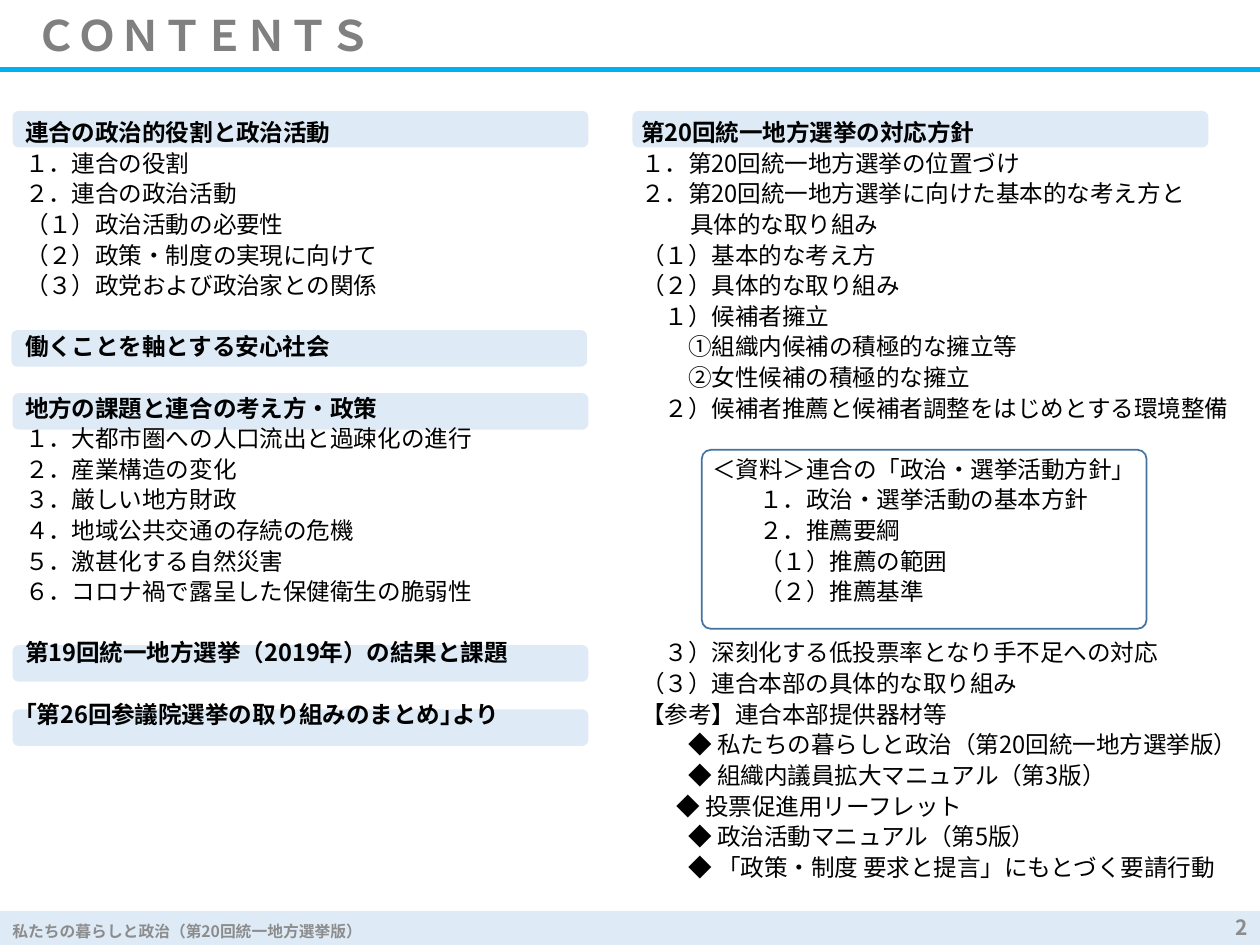
from dataclasses import dataclass
from lxml.etree import SubElement
from pptx import Presentation
from pptx.dml.color import RGBColor as RGB
from pptx.enum.shapes import MSO_CONNECTOR as Link, MSO_SHAPE as Kind
from pptx.enum.text import MSO_ANCHOR as Anchor, PP_ALIGN as Align
from pptx.oxml.ns import qn
from pptx.util import Inches, Pt


@dataclass
class Theme:
    font = "Noto Sans CJK JP"
    ink = RGB(0, 0, 0)
    title = RGB(0x80, 0x80, 0x80)
    foot = RGB(0x8C, 0x8C, 0x8C)
    pale = RGB(0xDE, 0xEB, 0xF7)
    rule = RGB(0x00, 0xB0, 0xF0)
    frame = RGB(0x43, 0x73, 0x9E)
    head_size = Pt(24)
    body_size = Pt(13.5)
    foot_size = Pt(9)
    page_size = Pt(12)
    pitch = Pt(17.5)


look = Theme()
deck = Presentation()
deck.slide_width, deck.slide_height = Inches(10), Inches(7.5)
slide = deck.slides.add_slide(deck.slide_layouts[6])
shapes = slide.shapes


def add_run(para, text, size, color, bold=False):
    run = para.add_run()
    run.text = text
    font = run.font
    font.name, font.size, font.bold = look.font, size, bold
    font.color.rgb = color
    props = run._r.get_or_add_rPr()
    SubElement(props, qn("a:ea")).set("typeface", look.font)
    return props


def add_panel(kind, left, top, width, height):
    panel = shapes.add_shape(kind, Inches(left), Inches(top), Inches(width), Inches(height))
    panel.shadow.inherit = False
    panel.fill.solid()
    panel.fill.fore_color.rgb = look.pale
    panel.line.fill.background()
    return panel


# Footer band and title rule
add_panel(Kind.RECTANGLE, 0, 7.23, 10, 0.27)
rule = shapes.add_connector(Link.STRAIGHT, 0, Inches(0.55), Inches(10), Inches(0.55))
rule.line.color.rgb = look.rule
rule.line.width = Pt(3)
SubElement(rule._element.spPr, qn("a:effectLst"))

# Heading bars
for left, top in [(0.09, 2.62), (0.1, 0.88), (0.1, 3.12), (0.1, 5.12), (0.1, 5.63), (5.02, 0.88)]:
    add_panel(Kind.ROUNDED_RECTANGLE, left, top, 4.57, 0.29)

# Frame around the reference material
frame = add_panel(Kind.ROUNDED_RECTANGLE, 5.57, 3.57, 3.53, 1.42)
frame.adjustments[0] = 0.05
frame.fill.background()
frame.line.color.rgb = look.frame
frame.line.width = Pt(1)

# Title
title = shapes.add_textbox(Inches(0.18), Inches(0.03), Inches(3.66), Inches(0.5))
title.text_frame.word_wrap = True
add_run(title.text_frame.paragraphs[0], "ＣＯＮＴＥＮＴＳ", look.head_size, look.title, True)

# Footer text and page number
for left, top, width, text, size, align in [
    (0, 7.26, 3.38, "私たちの暮らしと政治（第20回統一地方選挙版）", look.foot_size, Align.LEFT),
    (7.75, 7.23, 2.25, "2", look.page_size, Align.RIGHT),
]:
    box = shapes.add_textbox(Inches(left), Inches(top), Inches(width), Inches(0.26))
    body = box.text_frame
    body.word_wrap = True
    body.vertical_anchor = Anchor.MIDDLE
    body.margin_top = body.margin_bottom = 0
    body.paragraphs[0].alignment = align
    add_run(body.paragraphs[0], text, size, look.foot, True)

# Each row: indent in full-width characters, text, then marks:
# "b" is bold, "g" leaves one line free above. "|" parts the runs.
left_rows = [
    (0, "連合の政治的役割と政治活動", "b"),
    (0, "１．連合の役割", ""),
    (0, "２．連合の政治活動", ""),
    (0, "（１）政治活動の必要性", ""),
    (0, "（２）政策・制度の実現に向けて", ""),
    (0, "（３）政党および政治家との関係", ""),
    (0, "働くことを軸とする安心社会", "bg"),
    (0, "地方の課題と連合の考え方・政策", "bg"),
    (0, "１．大都市圏への人口流出と過疎化の進行", ""),
    (0, "２．産業構造の変化", ""),
    (0, "３．厳しい地方財政", ""),
    (0, "４．地域公共交通の存続の危機", ""),
    (0, "５．激甚化する自然災害", ""),
    (0, "６．コロナ禍で露呈した保健衛生の脆弱性", ""),
    (0, "第19回統一地方選挙（2019年）の結果と課題", "bg"),
    (0, "｢第26回参議院選挙の取り組みのまとめ｣より", "bg"),
]
right_rows = [
    (0, "第20回統一地方選挙の対応方針", "b"),
    (0, "１．第20回統一地方選挙の位置づけ", ""),
    (0, "２．第20回統一地方選挙に向けた基本的な考え方|と|具体的な取り組み", ""),
    (0, "（１）基本的な考え方", ""),
    (0, "（２）具体的な取り組み", ""),
    (1, "１）候補者擁立", ""),
    (2, "①組織内候補の積極的な擁立等", ""),
    (2, "②女性候補の積極的な擁立", ""),
    (1, "２）候補者推薦と候補者調整をはじめとする環境整備", ""),
    (3, "＜資料＞連合の「政治・選挙活動方針」", "g"),
    (5, "１．政治・選挙活動の基本方針", ""),
    (5, "２．推薦要綱", ""),
    (5, "（１）推薦の範囲", ""),
    (5, "（２）推薦基準", ""),
    (1, "３）深刻化する低投票率となり手不足への対応", "g"),
    (0, "（３）連合本部の具体的な取り組み", ""),
    (0, "【参考】連合本部提供器材等", ""),
    (2, "◆ 私たちの暮らしと政治（第20回統一地方選挙版）", ""),
    (2, "◆ 組織内議員拡大マニュアル（第3版）", ""),
    (1.5, "◆ 投票促進用リーフレット", ""),
    (2, "◆ 政治活動マニュアル（第5版）", ""),
    (2, "◆ 「政策・制度 要求と提言」にもとづく要請行動", ""),
]
hang = Inches(0.39)
for left, rows in [(0.1, left_rows), (4.99, right_rows)]:
    box = shapes.add_textbox(Inches(left), Inches(0.87), Inches(5.01), Inches(6.36))
    body = box.text_frame
    body.word_wrap = True
    for place, (depth, text, marks) in enumerate(rows):
        para = body.add_paragraph() if place else body.paragraphs[0]
        para.line_spacing = look.pitch
        if "g" in marks:
            para.space_before = look.pitch
        props = para._p.get_or_add_pPr()
        props.set("marL", str(hang))
        props.set("indent", str(int(depth * look.body_size) - hang))
        for part in text.split("|"):
            font = add_run(para, part, look.body_size, look.ink, "b" in marks)
            if part == "と":
                font.set("spc", "4050")  # three characters of room

deck.save("out.pptx")
